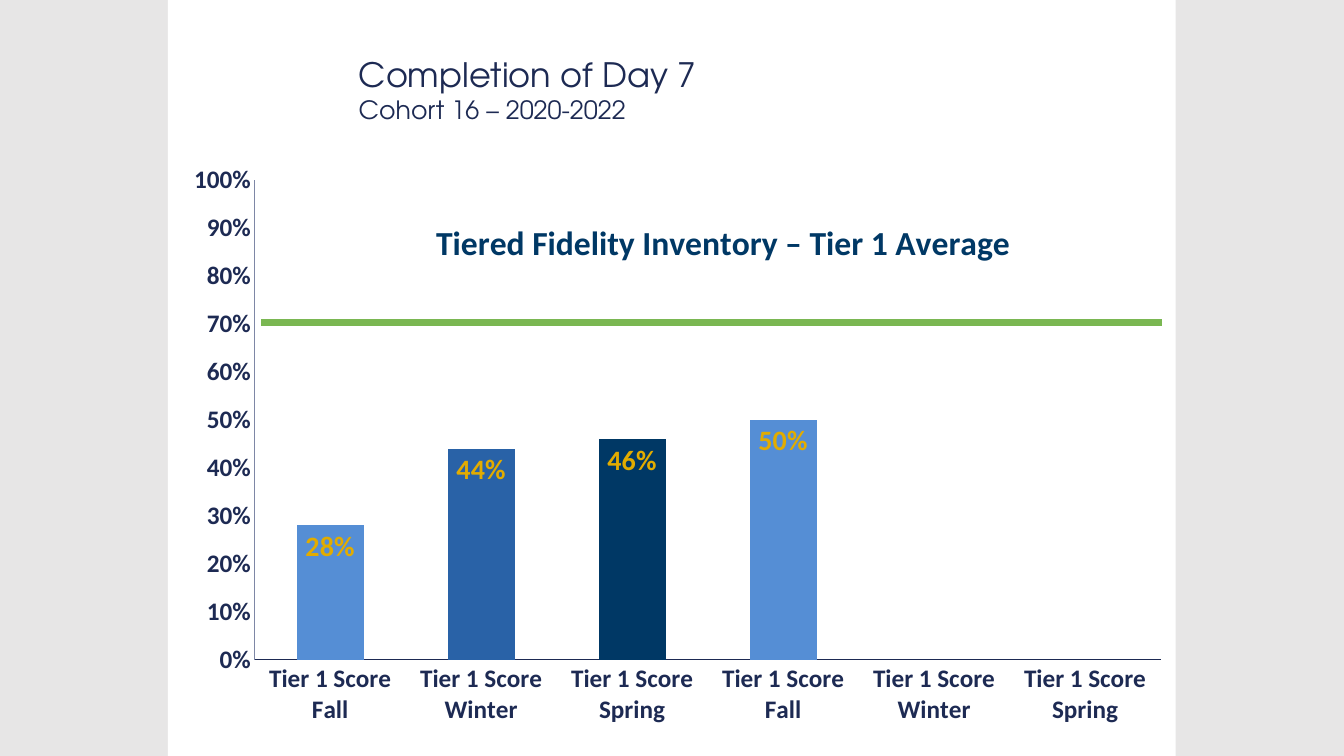
from dataclasses import dataclass

from lxml import etree
from pptx import Presentation
from pptx.chart.data import CategoryChartData
from pptx.dml.color import RGBColor
from pptx.enum.chart import XL_CHART_TYPE, XL_LABEL_POSITION, XL_TICK_MARK
from pptx.enum.shapes import MSO_CONNECTOR, MSO_SHAPE
from pptx.enum.text import MSO_ANCHOR
from pptx.oxml.ns import qn
from pptx.util import Cm, Pt

COLUMNS = XL_CHART_TYPE.COLUMN_CLUSTERED
INSIDE_END = XL_LABEL_POSITION.INSIDE_END
NO_TICK = XL_TICK_MARK.NONE
STRAIGHT = MSO_CONNECTOR.STRAIGHT
RECTANGLE = MSO_SHAPE.RECTANGLE
MIDDLE = MSO_ANCHOR.MIDDLE

HEADING_FONT = "TeX Gyre Adventor"
CHART_FONT = "Calibri"
COLORS = {
    "background": "E7E6E6",
    "page": "FFFFFF",
    "text": "1D2A53",
    "chart text": "3A54A5",
    "value line": "7E87A6",
    "chart title": "003865",
    "series": "8EB4E3",
    "Fall": "558ED5",
    "Winter": "2962A7",
    "Spring": "003865",
    "label": "E2AC00",
    "goal": "7AB752",
}


@dataclass
class Score:
    season: str
    value: float | None


@dataclass
class Heading:
    text: str
    size: int


SCORES = [
    Score("Fall", 0.28),
    Score("Winter", 0.44),
    Score("Spring", 0.46),
    Score("Fall", 0.5),
    Score("Winter", None),
    Score("Spring", None),
]
HEADINGS = [Heading("Completion of Day 7", 24), Heading("Cohort 16 – 2020-2022", 18)]


def rgb(name: str) -> RGBColor:
    return RGBColor.from_string(COLORS[name])


def set_fill(fill, color: str) -> None:
    fill.solid()
    fill.fore_color.rgb = rgb(color)


def set_font(font, name: str, size: int, color: str, bold: bool = False) -> None:
    font.name = name
    font.size = Pt(size)
    font.bold = bold
    font.color.rgb = rgb(color)


def set_layout(parent, index: int, **settings: str | float) -> None:
    """Give a chart title or plot area a manual layout, as child number index."""
    for old in parent.findall(qn("c:layout")):
        parent.remove(old)
    layout = etree.Element(qn("c:layout"))
    manual = etree.SubElement(layout, qn("c:manualLayout"))
    for tag, value in settings.items():
        etree.SubElement(manual, qn(f"c:{tag}")).set("val", str(value))
    parent.insert(index, layout)


def add_page(slide) -> None:
    sp = slide.shapes.add_shape(RECTANGLE, Cm(4.23), 0, Cm(25.4), Cm(19.05))
    sp.shadow.inherit = False
    set_fill(sp.fill, "page")
    sp.line.fill.background()


def add_headings(slide) -> None:
    tf = slide.shapes.add_textbox(Cm(8.79), Cm(0.97), Cm(19.41), Cm(2.54)).text_frame
    tf.word_wrap = True
    tf.vertical_anchor = MIDDLE
    for i, heading in enumerate(HEADINGS):
        p = tf.add_paragraph() if i else tf.paragraphs[0]
        p.text = heading.text
        set_font(p.font, HEADING_FONT, heading.size, "text")


def style_axis(axis, line_color: str) -> None:
    axis.has_major_gridlines = False
    axis.major_tick_mark = axis.minor_tick_mark = NO_TICK
    set_font(axis.tick_labels.font, CHART_FONT, 18, "text", bold=True)
    axis.format.line.color.rgb = rgb(line_color)
    axis.format.line.width = Pt(0.75)


def add_chart_title(chart) -> None:
    title = chart.chart_title
    p = title.text_frame.paragraphs[0]
    p.text = "Tiered Fidelity Inventory – Tier 1 Average"
    set_font(p.font, CHART_FONT, 24, "chart title", bold=True)
    element = chart.element.find(".//" + qn("c:title"))
    set_layout(element, 1, xMode="edge", yMode="edge", x=0.25, y=0.09)
    element.find(qn("c:overlay")).set("val", "1")


def add_score_chart(slide) -> None:
    data = CategoryChartData(number_format="0%")
    data.categories = [f"Tier 1 Score\n{score.season}" for score in SCORES]
    data.add_series("Series 1", [score.value for score in SCORES])
    chart = slide.shapes.add_chart(
        COLUMNS, Cm(4.7), Cm(4.09), Cm(24.56), Cm(14.58), data
    ).chart
    set_font(chart.font, CHART_FONT, 10, "chart text")
    chart.has_legend = False
    add_chart_title(chart)
    set_layout(
        chart.element.find(".//" + qn("c:plotArea")), 0,
        layoutTarget="inner", xMode="edge", yMode="edge",
        x=0.07, y=0.03, w=0.93, h=0.83,
    )

    style_axis(chart.category_axis, "text")
    value_axis = chart.value_axis
    style_axis(value_axis, "value line")
    value_axis.minimum_scale, value_axis.maximum_scale = 0, 1
    value_axis.major_unit = 0.1
    value_axis.tick_labels.number_format = "0%"
    value_axis.tick_labels.number_format_is_linked = False

    plot = chart.plots[0]
    plot.vary_by_categories = False
    plot.gap_width, plot.overlap = 125, -100
    series = plot.series[0]
    set_fill(series.format.fill, "series")
    for i, score in enumerate(SCORES):
        set_fill(series.points[i].format.fill, score.season)
    labels = series.data_labels
    labels.show_value = True
    labels.position = INSIDE_END
    labels.number_format = "0%"
    labels.number_format_is_linked = False
    set_font(labels.font, CHART_FONT, 20, "label", bold=True)


def add_goal_line(slide) -> None:
    y = Cm(8.13)
    line = slide.shapes.add_connector(STRAIGHT, Cm(6.58), y, Cm(29.29), y)
    line.line.color.rgb = rgb("goal")
    line.line.width = Pt(4.5)
    etree.SubElement(line.element.spPr, qn("a:effectLst"))


def main() -> None:
    prs = Presentation()
    prs.slide_width, prs.slide_height = Cm(33.87), Cm(19.05)
    slide = prs.slides.add_slide(prs.slide_layouts[6])
    set_fill(slide.background.fill, "background")
    add_page(slide)
    add_headings(slide)
    add_score_chart(slide)
    add_goal_line(slide)
    prs.save("out.pptx")


if __name__ == "__main__":
    main()
